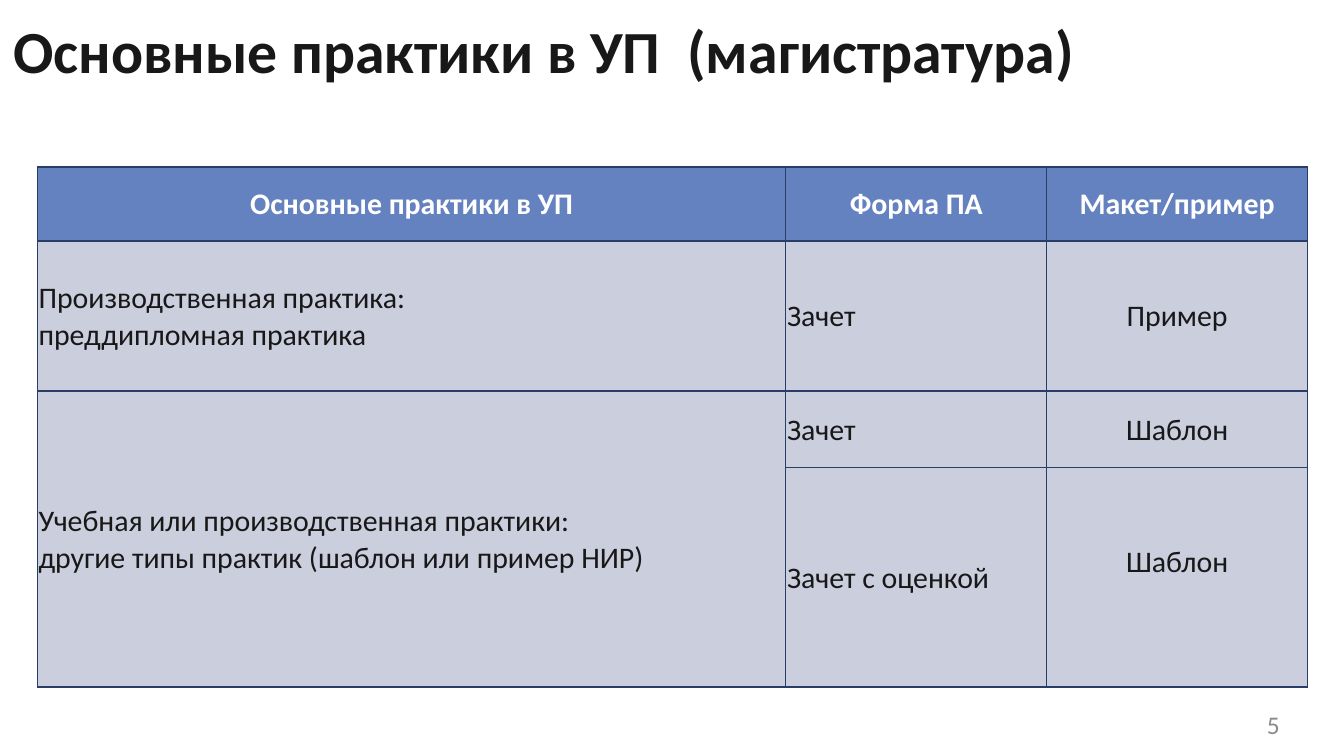
from pptx import Presentation
from pptx.dml.color import RGBColor
from pptx.enum.text import MSO_ANCHOR as ANCHOR, PP_ALIGN as ALIGN
from pptx.oxml import parse_xml
from pptx.oxml.ns import nsdecls
from pptx.util import Pt

FONT = "Calibri"
INK = RGBColor(0x18, 0x18, 0x18)
GRAY = RGBColor(0x8C, 0x8C, 0x8C)
WHITE = RGBColor(0xFF, 0xFF, 0xFF)
HEAD_FILL = RGBColor(0x65, 0x82, 0xC0)
BODY_FILL = RGBColor(0xCB, 0xCE, 0xDD)
BORDER = RGBColor(0x29, 0x3D, 0x69)

COL_WIDTHS = [401, 139.75, 139.75]
ROW_HEIGHTS = [39.6, 80.4, 41.1, 117.5]
ROWS = [
    ["Основные практики в УП", "Форма ПА", "Макет/пример"],
    ["Производственная практика:\vпреддипломная практика", "Зачет", "Пример"],
    ["Учебная или производственная практики:\v"
     "другие типы практик (шаблон или пример НИР)", "Зачет", "Шаблон"],
    ["", "Зачет с оценкой", "Шаблон"],
]
BODY_ALIGNS = [ALIGN.LEFT, ALIGN.JUSTIFY, ALIGN.CENTER]


def style_paragraph(p, size, color, bold=False, align=ALIGN.LEFT):
    """Set the font and alignment of a paragraph."""
    p.alignment = align
    p.font.name = FONT
    p.font.size = Pt(size)
    p.font.bold = bold
    p.font.color.rgb = color


def add_label(slide, box, text, size, color, bold=False,
              align=ALIGN.LEFT, anchor=ANCHOR.TOP):
    """Place one line of text in the given box."""
    tf = slide.shapes.add_textbox(*map(Pt, box)).text_frame
    tf.word_wrap = True
    tf.vertical_anchor = anchor
    tf.text = text
    style_paragraph(tf.paragraphs[0], size, color, bold, align)


def add_borders(cell):
    """Draw a thin line on the four sides of a cell."""
    tc_pr = cell._tc.get_or_add_tcPr()
    for i, side in enumerate(("lnL", "lnR", "lnT", "lnB")):
        tc_pr.insert(i, parse_xml(
            f'<a:{side} {nsdecls("a")} w="{Pt(0.75)}"><a:solidFill>'
            f'<a:srgbClr val="{BORDER}"/></a:solidFill></a:{side}>'))


def add_practice_table(slide, box):
    """Place the table of practices in the given box."""
    table = slide.shapes.add_table(
        len(ROWS), len(COL_WIDTHS), *map(Pt, box)).table
    for column, width in zip(table.columns, COL_WIDTHS):
        column.width = Pt(width)
    for row, height in zip(table.rows, ROW_HEIGHTS):
        row.height = Pt(height)
    for r, texts in enumerate(ROWS):
        head = r == 0
        for c, text in enumerate(texts):
            cell = table.cell(r, c)
            cell.margin_left = cell.margin_right = cell.margin_top = Pt(0.7)
            cell.margin_bottom = Pt(0)
            cell.vertical_anchor = ANCHOR.MIDDLE
            cell.fill.solid()
            cell.fill.fore_color.rgb = HEAD_FILL if head else BODY_FILL
            add_borders(cell)
            cell.text = text
            style_paragraph(cell.text_frame.paragraphs[0], 16,
                            WHITE if head else INK, head,
                            ALIGN.CENTER if head else BODY_ALIGNS[c])
    table.cell(2, 0).merge(table.cell(3, 0))
    table.cell(3, 2).margin_bottom = Pt(17)


def main():
    """Build and save the slide."""
    prs = Presentation()
    prs.slide_width, prs.slide_height = Pt(720), Pt(405)
    slide = prs.slides.add_slide(prs.slide_layouts[6])
    add_label(slide, (0, 3.6, 666, 68.4),
              "Основные практики в УП  (магистратура)", 32, INK, bold=True)
    add_practice_table(slide, (20, 89.5, sum(COL_WIDTHS), sum(ROW_HEIGHTS)))
    add_label(slide, (652.3, 377.3, 40.3, 21.6), "5", 13.6, GRAY,
              align=ALIGN.RIGHT, anchor=ANCHOR.MIDDLE)
    prs.save("out.pptx")


if __name__ == "__main__":
    main()
